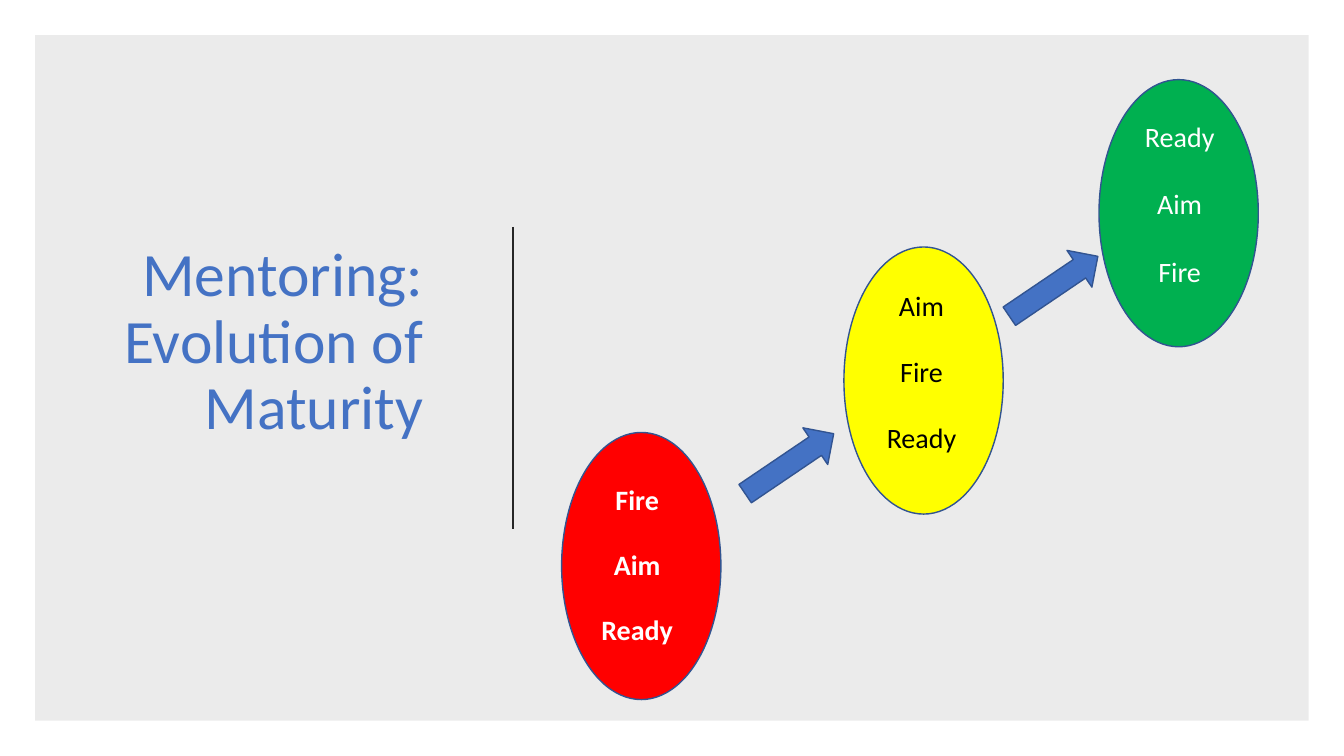
"""Build the mentoring maturity slide: three stages rising from left to right."""
from lxml import etree
from pptx import Presentation
from pptx.dml.color import RGBColor
from pptx.enum import shapes, text
from pptx.oxml import ns
from pptx.util import Inches, Pt

THEME = {
    "font": "Calibri", "title_size": 44, "word_size": 20,
    "panel": "000000", "panel_alpha": 8, "divider": "262626",
    "accent": "4472C4", "outline": "325491",
    "red": "FF0000", "yellow": "FFFF00", "green": "00B050",
    "light": "FFFFFF", "dark": "000000",
}


def add_shape(parent, kind, box, fill, line=None):
    sp = parent.add_shape(kind, *[Inches(v) for v in box])
    sp.shadow.inherit = False
    sp.fill.solid()
    sp.fill.fore_color.rgb = RGBColor.from_string(THEME[fill])
    if line:
        sp.line.color.rgb = RGBColor.from_string(THEME[line])
        sp.line.width = Pt(1)
    else:
        sp.line.fill.background()
    return sp


def write(sp, words, size, color, align, wrap, bold=False):
    tf = sp.text_frame
    tf.text = words
    tf.word_wrap = wrap
    tf.vertical_anchor = text.MSO_ANCHOR.MIDDLE
    p = tf.paragraphs[0]
    p.alignment = align
    for r in p.runs:
        r.font.name = THEME["font"]
        r.font.size = Pt(THEME[size])
        r.font.bold = bold
        r.font.color.rgb = RGBColor.from_string(THEME[color])


prs = Presentation()
prs.slide_width, prs.slide_height = Inches(13.33), Inches(7.5)
s = prs.slides.add_slide(prs.slide_layouts[6])

panel = add_shape(s.shapes, shapes.MSO_SHAPE.RECTANGLE, (0.35, 0.35, 12.63, 6.8), "panel")
panel_color = panel.fill._xPr.find(ns.qn("a:solidFill"))[0]
etree.SubElement(panel_color, ns.qn("a:alpha"), val=str(THEME["panel_alpha"] * 1000))

divider = s.shapes.add_connector(
    shapes.MSO_CONNECTOR.STRAIGHT, Inches(5.09), Inches(2.25), Inches(5.09), Inches(5.25))
divider.line.color.rgb = RGBColor.from_string(THEME["divider"])
divider.line.width = Pt(1.5)
etree.SubElement(divider._element.spPr, ns.qn("a:effectLst"))

title = s.shapes.add_textbox(Inches(0.48), Inches(0.71), Inches(3.82), Inches(5.39))
write(title, "Mentoring:\vEvolution of Maturity", "title_size", "accent",
      text.PP_ALIGN.RIGHT, True)
title.text_frame.paragraphs[0].line_spacing = 0.9

word_widths = {"Ready": 0.92, "Aim": 0.67, "Fire": 0.63}
stages = [
    ("red", "light", True, (5.57, 4.29), 6.32, 4.73, 0.645, ("Fire", "Aim", "Ready"), None),
    ("yellow", "dark", False, (8.37, 2.45), 9.14, 2.81, 0.655, ("Aim", "Fire", "Ready"), (7.3, 4.38)),
    ("green", "light", False, (10.9, 0.79), 11.7, 1.13, 0.67, ("Ready", "Aim", "Fire"), (9.92, 2.62)),
]
for fill, color, bold, corner, center, top, step, words, arrow_at in stages:
    stage = s.shapes.add_group_shape().shapes
    add_shape(stage, shapes.MSO_SHAPE.OVAL, (*corner, 1.58, 2.65), fill, "outline")
    for i, word in enumerate(words):
        width = word_widths[word]
        label = add_shape(stage, shapes.MSO_SHAPE.RECTANGLE,
                          (center - width / 2, top + i * step, width, 0.44), fill)
        write(label, word, "word_size", color, text.PP_ALIGN.CENTER, False, bold)
        label.text_frame.auto_size = text.MSO_AUTO_SIZE.SHAPE_TO_FIT_TEXT
    if arrow_at:
        arrow = add_shape(stage, shapes.MSO_SHAPE.RIGHT_ARROW, (*arrow_at, 1.06, 0.44),
                          "accent", "outline")
        arrow.rotation = 325.9

prs.save("out.pptx")
